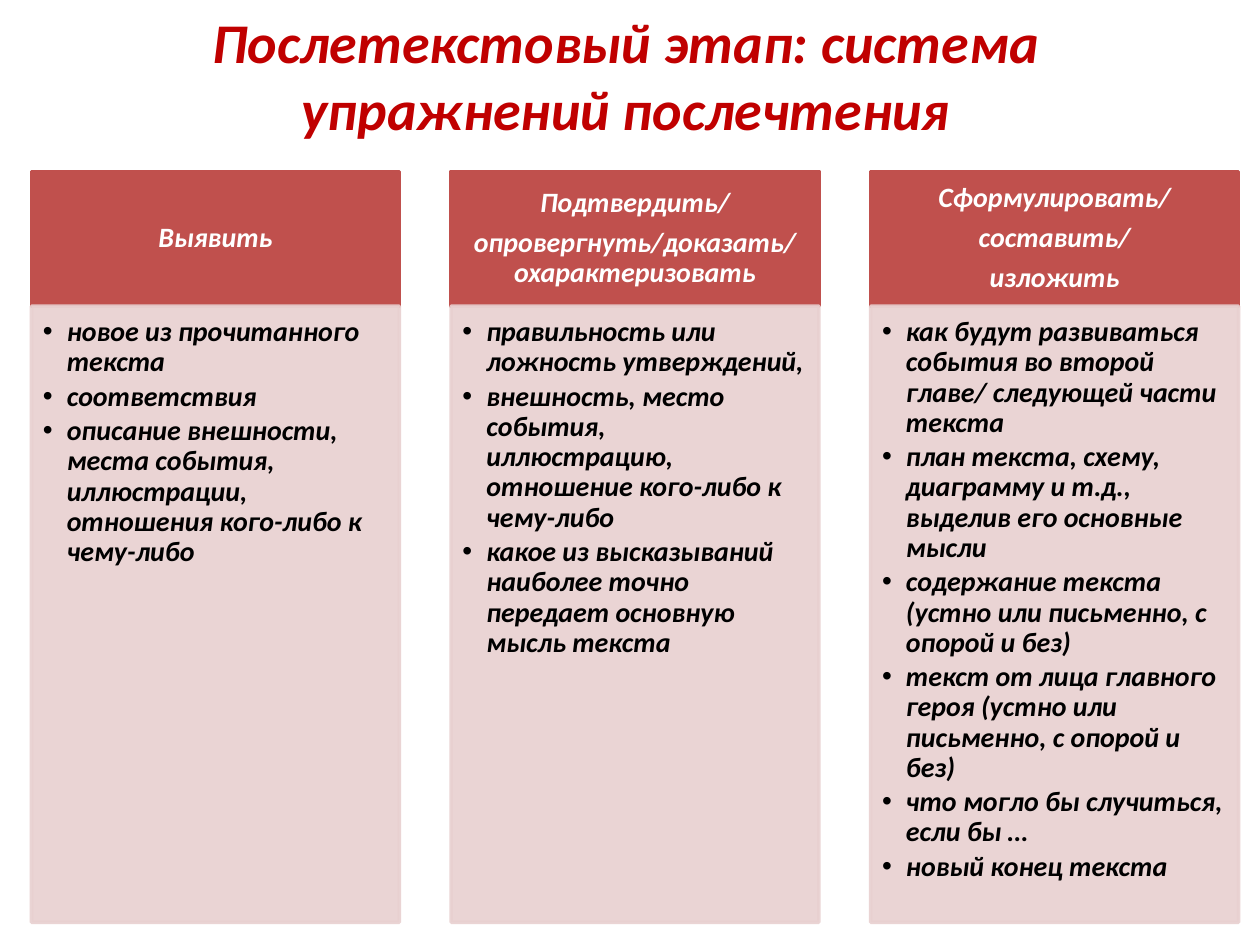
from lxml.etree import SubElement
from pptx import Presentation
from pptx.dml.color import RGBColor
from pptx.enum.shapes import MSO_SHAPE
from pptx.enum.text import MSO_ANCHOR, PP_ALIGN
from pptx.oxml.ns import qn
from pptx.util import Inches, Pt

TITLE_RED = RGBColor(0xC0, 0x00, 0x00)
HEADER_RED = RGBColor(0xC0, 0x50, 0x4D)
PALE_PINK = RGBColor(0xE8, 0xD0, 0xD0)
WHITE = RGBColor(0xFF, 0xFF, 0xFF)
BLACK = RGBColor(0x00, 0x00, 0x00)

COLUMNS = [
    (["Выявить"],
     ["новое из прочитанного текста",
      "соответствия",
      "описание внешности, места события,  иллюстрации, "
      "отношения кого-либо к чему-либо"]),
    (["Подтвердить/", "опровергнуть/доказать/ охарактеризовать"],
     ["правильность или ложность утверждений,",
      "внешность, место события,  иллюстрацию, "
      "отношение кого-либо к чему-либо",
      "какое из высказываний наиболее точно передает основную мысль текста"]),
    (["Сформулировать/", "составить/", "изложить"],
     ["как будут развиваться события во второй главе/ следующей части текста",
      "план текста, схему, диаграмму и т.д., выделив его основные мысли",
      "содержание текста (устно или письменно, с опорой и без)",
      "текст от лица главного героя (устно или письменно, с опорой и без)",
      "что могло бы случиться, если бы …",
      "новый конец текста"]),
]
LEFT, PITCH, WIDTH = 0.25, 3.33, 2.92
HEADER_TOP, HEADER_HEIGHT = 1.36, 1.07
BODY_TOP, BODY_HEIGHT = HEADER_TOP + HEADER_HEIGHT, 4.89


def add_run(p, text, size, color):
    r = p.add_run()
    r.text = text
    r.font.name = "Calibri"
    r.font.size = Pt(size)
    r.font.bold = r.font.italic = True
    r.font.color.rgb = color


def add_box(s, left, top, height, fill, margins, anchor):
    """Add a filled column box and return it with its text frame set up."""
    sp = s.shapes.add_shape(MSO_SHAPE.RECTANGLE, Inches(left), Inches(top),
                            Inches(WIDTH), Inches(height))
    sp.shadow.inherit = False
    sp.fill.solid()
    sp.fill.fore_color.rgb = fill
    sp.line.color.rgb = fill
    sp.line.width = Pt(2)
    tf = sp.text_frame
    tf.word_wrap = True
    tf.vertical_anchor = anchor
    (tf.margin_left, tf.margin_top,
     tf.margin_right, tf.margin_bottom) = [Inches(m) for m in margins]
    return sp


prs = Presentation()
prs.slide_width, prs.slide_height = Inches(10), Inches(7.5)
s = prs.slides.add_slide(prs.slide_layouts[5])

title = s.shapes.title
title.left, title.top = Inches(0.47), Inches(0.16)
title.width, title.height = Inches(9), Inches(0.87)
tf = title.text_frame
tf.vertical_anchor = MSO_ANCHOR.MIDDLE
p = tf.paragraphs[0]
p.alignment = PP_ALIGN.CENTER
add_run(p, "Послетекстовый этап: система упражнений послечтения", 32, TITLE_RED)

for col, (heading, items) in enumerate(COLUMNS):
    left = LEFT + col * PITCH

    header = add_box(s, left, HEADER_TOP, HEADER_HEIGHT, HEADER_RED,
                     (0.12, 0.07, 0.12, 0.07), MSO_ANCHOR.MIDDLE)
    tf = header.text_frame
    for i, text in enumerate(heading):
        p = tf.add_paragraph() if i else tf.paragraphs[0]
        p.alignment = PP_ALIGN.CENTER
        p.line_spacing = 0.9
        p.space_after = Pt(5.6)
        add_run(p, text, 16, WHITE)

    body = add_box(s, left, BODY_TOP, BODY_HEIGHT, PALE_PINK,
                   (0.09, 0.09, 0.12, 0.14), MSO_ANCHOR.TOP)
    for color in body.fill.fore_color, body.line.color:
        color.brightness = 0
    for clr in body.element.spPr.iter(qn("a:srgbClr")):
        SubElement(clr, qn("a:alpha"), val="90000")
    tf = body.text_frame
    for i, text in enumerate(items):
        p = tf.add_paragraph() if i else tf.paragraphs[0]
        p.level = 1
        p.alignment = PP_ALIGN.LEFT
        p.line_spacing = 0.9
        p.space_after = Pt(2.4)
        pPr = p._p.get_or_add_pPr()
        pPr.set("marL", str(Inches(0.19)))
        pPr.set("indent", str(Inches(-0.19)))
        SubElement(pPr, qn("a:buFont"), typeface="Arial")
        SubElement(pPr, qn("a:buChar"), char="•")
        add_run(p, text, 16, BLACK)

prs.save("out.pptx")
